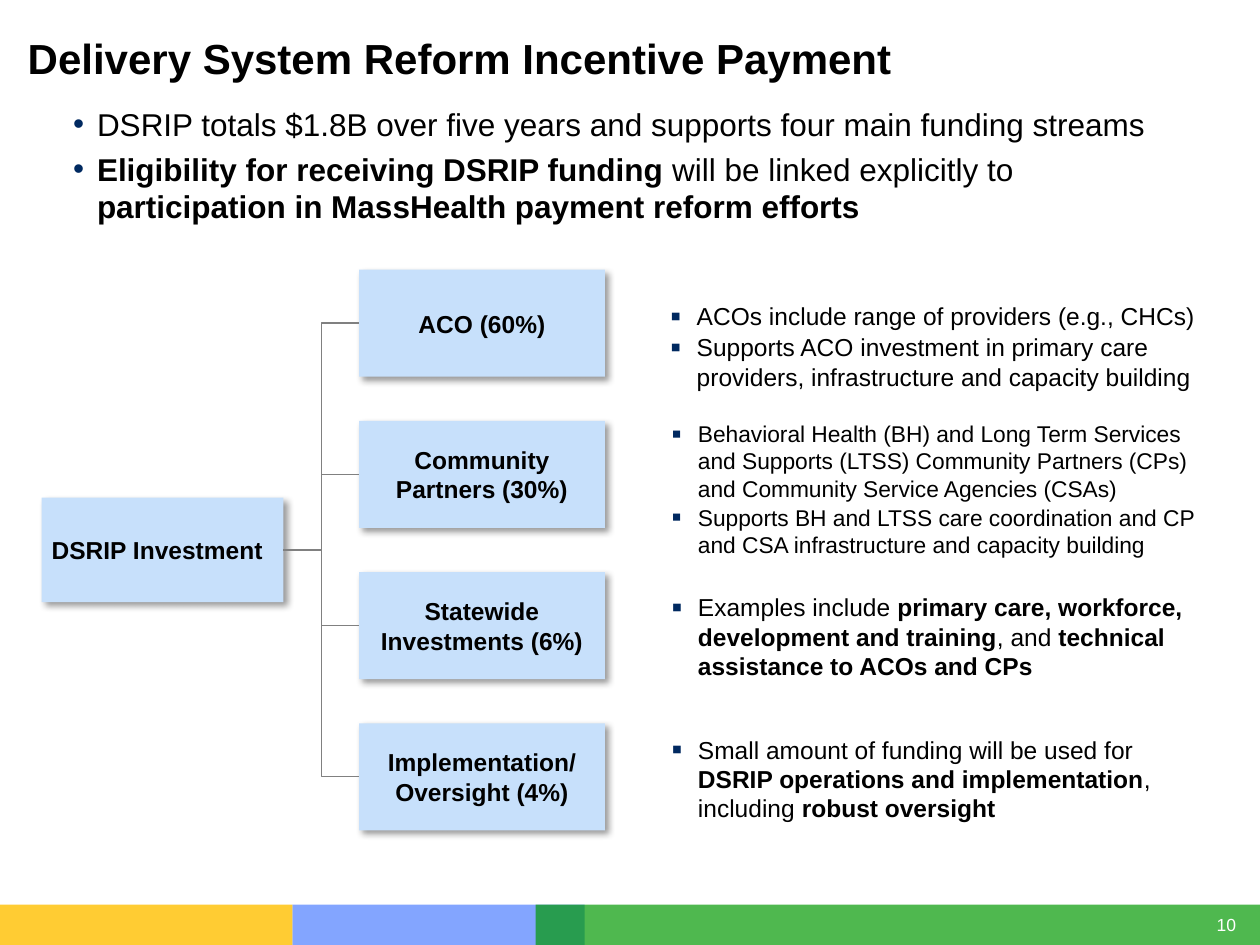
from lxml import etree
from pptx import Presentation
from pptx.dml.color import RGBColor
from pptx.enum import shapes, text
from pptx.oxml import ns
from pptx.util import Inches, Pt

BLACK = RGBColor(0x00, 0x00, 0x00)
WHITE = RGBColor(0xFF, 0xFF, 0xFF)
NAVY = RGBColor(0x00, 0x29, 0x60)
PALE_BLUE = RGBColor(0xC7, 0xE0, 0xFB)
GREY = RGBColor(0x80, 0x80, 0x80)
BLUE = RGBColor(0x5E, 0x8B, 0xFF)
YELLOW = RGBColor(0xFF, 0xC0, 0x00)
GREEN = RGBColor(0x00, 0x99, 0x00)

LEFT, CENTER, RIGHT = text.PP_ALIGN.LEFT, text.PP_ALIGN.CENTER, text.PP_ALIGN.RIGHT
TOP, MIDDLE = text.MSO_ANCHOR.TOP, text.MSO_ANCHOR.MIDDLE


def add_xml(parent, tag, **attrs):
    child = etree.SubElement(parent, ns.qn(tag))
    for name, value in attrs.items():
        child.set(name, str(value))
    return child


def write(tf, lines, size, color=BLACK, align=LEFT, anchor=TOP, margin=0,
          wrap=True, bullet=None, indent=0, bullet_pct=100, after=0):
    """Fill a text frame; parts between ** marks are bold."""
    frame_format = {"word_wrap": wrap, "auto_size": text.MSO_AUTO_SIZE.NONE,
                    "vertical_anchor": anchor}
    for side in ("left", "top", "right", "bottom"):
        frame_format["margin_" + side] = Inches(margin)
    for name, value in frame_format.items():
        setattr(tf, name, value)
    for i, line in enumerate(lines):
        p = tf.add_paragraph() if i else tf.paragraphs[0]
        for name, value in {"alignment": align, "space_before": Pt(0),
                            "space_after": Pt(after)}.items():
            setattr(p, name, value)
        if bullet:
            pPr = p._p.get_or_add_pPr()
            pPr.set("marL", str(Inches(indent)))
            pPr.set("indent", str(-Inches(indent)))
            add_xml(add_xml(pPr, "a:buClr"), "a:srgbClr", val=NAVY)
            add_xml(pPr, "a:buSzPct", val=bullet_pct * 1000)
            add_xml(pPr, "a:buFont", typeface="Arial")
            add_xml(pPr, "a:buChar", char=bullet)
        for j, part in enumerate(line.split("**")):
            if part:
                r = p.add_run()
                r.text = part
                for name, value in {"name": "Arial", "size": Pt(size),
                                    "bold": j % 2 == 1}.items():
                    setattr(r.font, name, value)
                r.font.color.rgb = color


prs = Presentation()
prs.slide_width, prs.slide_height = Inches(10), Inches(7.5)
s = prs.slides.add_slide(prs.slide_layouts[1])

# Footer band and page number
for left, width, color, opacity in [(2.32, 2.32, BLUE, 77), (0, 2.32, YELLOW, 80),
                                    (4.25, 5.75, GREEN, 69)]:
    sp = s.shapes.add_shape(shapes.MSO_SHAPE.RECTANGLE, Inches(left), Inches(7.18),
                            Inches(width), Inches(0.32))
    sp.shadow.inherit = False
    sp.fill.solid()
    sp.fill.fore_color.rgb = color
    sp.line.fill.background()
    rgb = sp._element.spPr.find(ns.qn("a:solidFill")).find(ns.qn("a:srgbClr"))
    add_xml(rgb, "a:alpha", val=opacity * 1000)
page = s.shapes.add_textbox(Inches(9.63), Inches(7.25), Inches(0.18), Inches(0.17))
write(page.text_frame, ["10"], 10, WHITE, RIGHT, MIDDLE, wrap=False)

# Title and main points
title, body = s.shapes.title, s.placeholders[1]
for sp, box in [(title, (0.22, 0.26, 9.53, 0.5)), (body, (0.58, 0.83, 8.75, 0.96))]:
    sp.left, sp.top, sp.width, sp.height = map(Inches, box)
write(title.text_frame, ["**Delivery System Reform Incentive Payment**"], 24)
write(body.text_frame, [
    "DSRIP totals $1.8B over five years and supports four main funding streams",
    "**Eligibility for receiving DSRIP funding** will be linked explicitly to "
    "**participation in MassHealth payment reform efforts**",
], 18, bullet="•", indent=0.19, after=4.1)

# Investment tree: the root first, then four evenly spaced streams
nodes = [("DSRIP Investment", LEFT, (0.33, 3.95, 1.92, 0.83))]
streams = ["ACO (60%)", "Community Partners (30%)", "Statewide Investments (6%)",
           "Implementation/ Oversight (4%)"]
for i, label in enumerate(streams):
    nodes.append((label, CENTER, (2.85, 2.14 + 1.2 * i, 1.95, 0.85)))

boxes = []
for label, align, box in nodes:
    sp = s.shapes.add_shape(shapes.MSO_SHAPE.RECTANGLE, *map(Inches, box))
    sp.fill.solid()
    sp.fill.fore_color.rgb = PALE_BLUE
    sp.line.fill.background()
    sp.shadow.inherit = False
    effects = sp._element.spPr.find(ns.qn("a:effectLst"))
    shadow = add_xml(effects, "a:outerShdw", blurRad=Pt(4), dist=Pt(3),
                     dir=45 * 60000, algn="tl", rotWithShape=0)
    add_xml(add_xml(shadow, "a:srgbClr", val=BLACK), "a:alpha", val=40000)
    write(sp.text_frame, [f"**{label}**"], 14, align=align, anchor=MIDDLE, margin=0.08)
    boxes.append(sp)

root = boxes[0]
for stream in boxes[1:]:
    link = s.shapes.add_connector(
        shapes.MSO_CONNECTOR.ELBOW, root.left + root.width, root.top + root.height // 2,
        stream.left, stream.top + stream.height // 2)
    link.begin_connect(root, 3)
    link.end_connect(stream, 1)
    link.line.color.rgb = GREY
    link.line.width = Pt(0.75)
    add_xml(link._element.spPr, "a:effectLst")

# Notes beside each stream
details = [
    ((5.32, 2.39, 4.43, 0.72), 14, [
        "ACOs include range of providers (e.g., CHCs)",
        "Supports ACO investment in primary care providers, infrastructure and "
        "capacity building"]),
    ((5.33, 3.33, 4.24, 1.11), 13, [
        "Behavioral Health (BH) and Long Term Services and Supports (LTSS) Community "
        "Partners (CPs) and Community Service Agencies (CSAs)",
        "Supports BH and LTSS care coordination and CP and CSA infrastructure and "
        "capacity building"]),
    ((5.33, 4.7, 4.24, 0.72), 14, [
        "Examples include **primary care, workforce, development and training**, and "
        "**technical assistance to ACOs and CPs**"]),
    ((5.33, 5.83, 4.24, 0.71), 14, [
        "Small amount of funding will be used for **DSRIP operations and "
        "implementation**, including **robust oversight**"]),
]
for box, size, lines in details:
    detail = s.shapes.add_textbox(*map(Inches, box))
    write(detail.text_frame, lines, size, bullet="▪", indent=0.21, bullet_pct=125, after=1)

prs.save("out.pptx")
